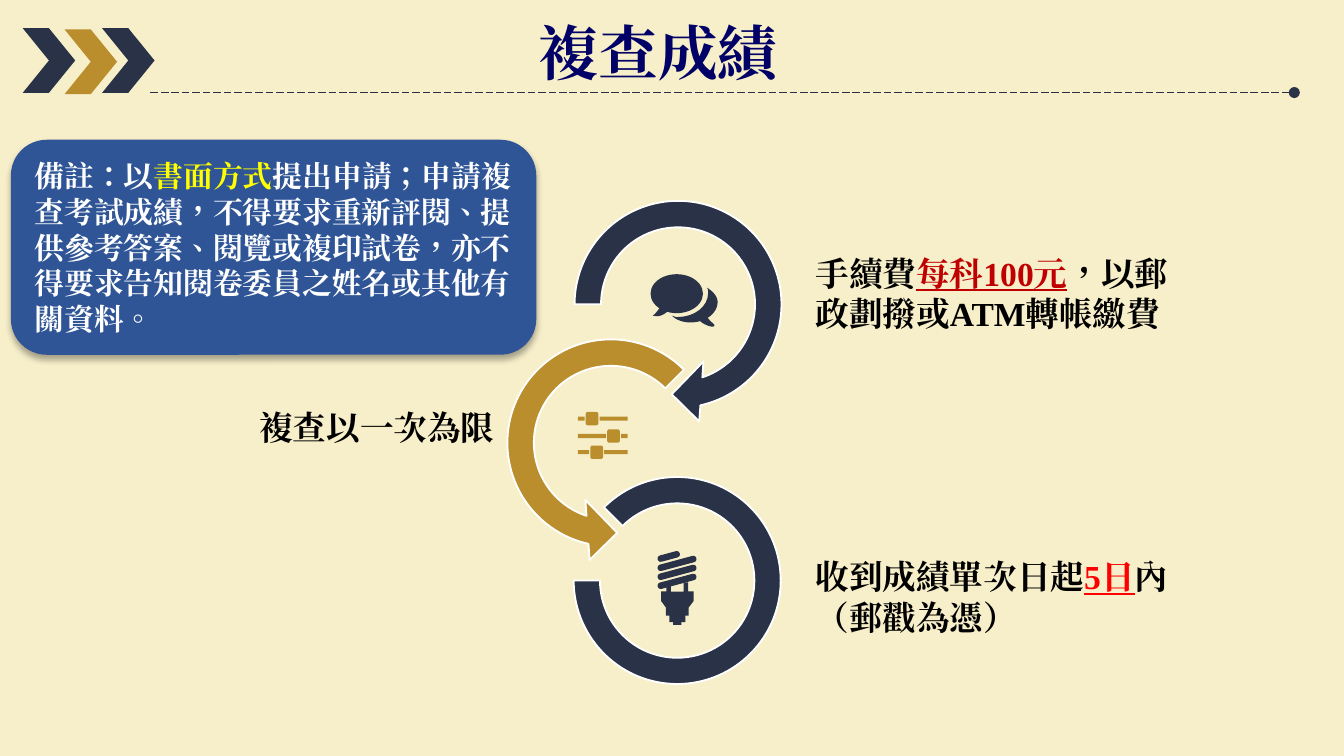
from math import atan2, cos, pi, sin

from lxml.etree import SubElement
from pptx import Presentation
from pptx.dml.color import RGBColor
from pptx.enum.dml import MSO_LINE
from pptx.enum.lang import MSO_LANGUAGE_ID
from pptx.enum.shapes import MSO_CONNECTOR, MSO_SHAPE
from pptx.enum.text import MSO_ANCHOR, MSO_AUTO_SIZE
from pptx.oxml.ns import qn
from pptx.util import Pt

THEME = {
    "cream": "F7EFCA", "navy": "293247", "gold": "BA8D2D", "blue": "2F5597",
    "white": "FFFFFF", "black": "000000", "title": "000066",
    "yellow": "FFFF00", "crimson": "C00000", "red": "FF0000",
    "serif": "Times New Roman", "sans": "Noto Sans CJK SC",
    "title_size": 32, "label_size": 18, "note_size": 16, "line_height": 1.2,
}

# Content: text runs are (text, colour, underlined)
TITLE = [("複查成績", "title", False)]
NOTE = [
    ("備註：以", "white", False),
    ("書面方式", "yellow", False),
    ("提出申請；申請複查考試成績，不得要求重新評閱、提供參考答案、閱覽或複印試卷，"
     "亦不得要求告知閱卷委員之姓名或其他有關資料。", "white", False),
]
LABELS = [  # box, font, runs
    ((429.8, 131.8, 216, 51), "serif", [
        ("手續費", "black", False), ("每科100元", "crimson", True),
        ("，以郵政劃撥或ATM轉帳繳費", "black", False)]),
    ((429.8, 294.5, 216, 51), "serif", [
        ("收到成績單次日起", "black", False), ("5日", "red", True),
        ("內（郵戳為憑）", "black", False)]),
    ((131.8, 214.6, 216, 29), "sans", [("複查以一次為限", "black", False)]),
]
RINGS = [  # preset, box, colour, adjustments
    (MSO_SHAPE.CIRCULAR_ARROW, (298.8, 98.6, 128.9, 128.9), "navy",
     (0.11, 11.42, 45, 108, 0.125)),
    (MSO_SHAPE.LEFT_CIRCULAR_ARROW, (262.8, 172.8, 128.9, 128.9), "gold",
     (0.11, 11.42, 63, 189, 0.125)),
    (MSO_SHAPE.BLOCK_ARC, (307.4, 255.6, 110.9, 110.9), "navy",
     (135, 108, 0.127)),
]
CHEVRONS = [((34.6, 15.8), "gold"), ((54.7, 15.1), "navy"), ((12.2, 15.1), "navy")]

# Chat icon: start point, then cubic curves
CHAT_BUBBLE = (348.5, 146.9, 28.1, 20.9)
CHAT_CURVES = [
    ((378.7, 154.1), [
        ((379.4, 154.8), (379.4, 156.2), (379.4, 157)),
        ((379.4, 164.2), (372.2, 169.9), (362.9, 169.9)),
        ((361.4, 169.9), (360.7, 169.2), (360, 169.2)),
        ((362.2, 171.4), (365.8, 172.8), (370.1, 172.8)),
        ((378, 172.8), (384.5, 167.8), (384.5, 162)),
        ((384.5, 159.1), (382.3, 156.2), (378.7, 154.1))]),
    ((355, 162.7), [
        ((353.5, 164.9), (351.4, 167.8), (350.6, 168.5)),
        ((349.2, 169.2), (349.9, 169.2), (350.6, 169.2)),
        ((352.1, 169.9), (356.4, 169.2), (359.3, 164.9)),
        ((362.2, 160.6), (355, 162.7), (355, 162.7))]),
    ((378, 167.8), [
        ((378.7, 170.6), (381.6, 172.8), (382.3, 173.5)),
        ((383, 174.2), (383, 175), (381.6, 175)),
        ((380.9, 175), (376.6, 174.2), (373.7, 170.6)),
        ((370.8, 166.3), (378, 167.8), (378, 167.8))]),
]

# Bulb icon: tube centre lines, and the right half of the base from its axis
BULB_AXIS = 362.9
BULB_TUBES = [((354, 299.3), (362.5, 297))] + [
    ((354, 304.2 + 4.8 * turn), (371.4, 299.5 + 4.8 * turn)) for turn in range(3)]
BULB_HALF = [(3.4, 317), (3.4, 312), (5.8, 312), (5.8, 316.8), (8.7, 316.8),
             (8.7, 322), (6.1, 325.5), (6.1, 329.8), (4.3, 329.8),
             (4.3, 333.4), (2.2, 333.4), (2.2, 334.8)]

# Slider icon: knob centres on rows between two ends
SLIDER_ENDS = (309.6, 336.2)
SLIDER_KNOBS = [(317.2, 224.3), (328.7, 233.6), (319.7, 242.3)]


def color(name):
    return RGBColor.from_string(THEME[name])


def paint(shape, fill, line=None):
    shape.shadow.inherit = False
    shape.fill.solid()
    shape.fill.fore_color.rgb = color(fill)
    if line:
        shape.line.color.rgb = color(line)
        shape.line.width = Pt(1)
    else:
        shape.line.fill.background()


def add_preset(shapes, preset, box, fill, line=None, adjustments=()):
    shape = shapes.add_shape(preset, *map(Pt, box))
    for index, value in enumerate(adjustments):
        shape.adjustments[index] = value
    paint(shape, fill, line)
    return shape


def add_outline(shapes, points, fill):
    start, *rest = [(Pt(x), Pt(y)) for x, y in points]
    builder = shapes.build_freeform(*start)
    builder.add_line_segments(rest, close=True)
    paint(builder.convert_to_shape(), fill)


def flatten(start, curves, steps=8):
    points = [start]
    for a, b, end in curves:
        origin = points[-1]
        for t in (step / steps for step in range(1, steps + 1)):
            weights = ((1 - t) ** 3, 3 * t * (1 - t) ** 2, 3 * t * t * (1 - t), t ** 3)
            points.append(tuple(sum(w * p[axis] for w, p in zip(weights, (origin, a, b, end)))
                                for axis in (0, 1)))
    return points


def capsule(left, right, radius=1.75, steps=6):
    angle = atan2(right[1] - left[1], right[0] - left[0])
    return [(x + radius * cos(angle + turn + pi * step / steps),
             y + radius * sin(angle + turn + pi * step / steps))
            for (x, y), turn in ((right, -pi / 2), (left, pi / 2))
            for step in range(steps + 1)]


def write(frame, runs, font, size):
    frame.word_wrap = True
    paragraph = frame.paragraphs[0]
    paragraph.line_spacing = Pt(size * THEME["line_height"])
    paragraph.font.name = THEME[font]
    paragraph.font.size = Pt(size)
    paragraph.font.bold = True
    paragraph.font.language_id = MSO_LANGUAGE_ID.TRADITIONAL_CHINESE
    east_asian = SubElement(paragraph.font._element, qn("a:ea"))
    east_asian.set("typeface", THEME["serif"])
    for text, ink, underlined in runs:
        run = paragraph.add_run()
        run.text = text
        run.font.color.rgb = color(ink)
        if underlined:
            run.font.underline = True
    return paragraph


def add_label(shapes, box, runs, font, size):
    frame = shapes.add_textbox(*map(Pt, box)).text_frame
    write(frame, runs, font, size)
    frame.auto_size = MSO_AUTO_SIZE.SHAPE_TO_FIT_TEXT


prs = Presentation()
prs.slide_width, prs.slide_height = Pt(720), Pt(405)
slide = prs.slides.add_slide(prs.slide_layouts[6])
slide.background.fill.solid()
slide.background.fill.fore_color.rgb = color("cream")
shapes = slide.shapes

# Header rule
rule = shapes.add_connector(MSO_CONNECTOR.STRAIGHT, Pt(80.6), Pt(49.6), Pt(693.4), Pt(49.6))
rule.line.color.rgb = color("navy")
rule.line.width = Pt(0.5)
rule.line.dash_style = MSO_LINE.LONG_DASH
SubElement(rule.line._get_or_add_ln(), qn("a:tailEnd")).set("type", "oval")
SubElement(rule._element.spPr, qn("a:effectLst"))

# Linked rings
for preset, box, fill, adjustments in RINGS:
    add_preset(shapes, preset, box, fill, "white", adjustments)

# Chat icon
chat = shapes.add_group_shape().shapes
add_preset(chat, MSO_SHAPE.OVAL, CHAT_BUBBLE, "navy")
for start, curves in CHAT_CURVES:
    add_outline(chat, flatten(start, curves), "navy")

# Bulb icon
bulb = shapes.add_group_shape().shapes
base = ([(BULB_AXIS + dx, y) for dx, y in BULB_HALF]
        + [(BULB_AXIS - dx, y) for dx, y in reversed(BULB_HALF)])
for points in [base] + [capsule(*tube) for tube in BULB_TUBES]:
    add_outline(bulb, points, "navy")

# Slider icon
sliders = shapes.add_group_shape().shapes
for x, y in SLIDER_KNOBS:
    for left, right in ((SLIDER_ENDS[0], x - 4), (x + 4, SLIDER_ENDS[1])):
        add_preset(sliders, MSO_SHAPE.RECTANGLE, (left, y - 1.1, right - left, 2.2), "gold")
    add_preset(sliders, MSO_SHAPE.ROUNDED_RECTANGLE, (x - 3.4, y - 3.6, 6.8, 7.2), "gold")

# Ring labels
for box, font, runs in LABELS:
    add_label(shapes, box, runs, font, THEME["label_size"])

# Chevrons and title
chevrons = shapes.add_group_shape().shapes
for corner, fill in CHEVRONS:
    add_preset(chevrons, MSO_SHAPE.CHEVRON, (*corner, 28.1, 34.6), fill)
add_label(shapes, (281.5, 5, 148.3, 46), TITLE, "sans", THEME["title_size"])

# Note card with a soft shadow
card = add_preset(shapes, MSO_SHAPE.ROUNDED_RECTANGLE, (5.8, 74.9, 281.5, 115.2), "blue")
effects = card._element.spPr.find(qn("a:effectLst"))
shadow = SubElement(effects, qn("a:outerShdw"), blurRad=str(Pt(3.5)), dist=str(Pt(2.2)),
                    dir="5400000", rotWithShape="0")
shade = SubElement(shadow, qn("a:srgbClr"), val=THEME["black"])
SubElement(shade, qn("a:alpha"), val="32000")
card.text_frame.vertical_anchor = MSO_ANCHOR.MIDDLE
note = write(card.text_frame, NOTE, "serif", THEME["note_size"])
note.alignment = 1

prs.save("out.pptx")
